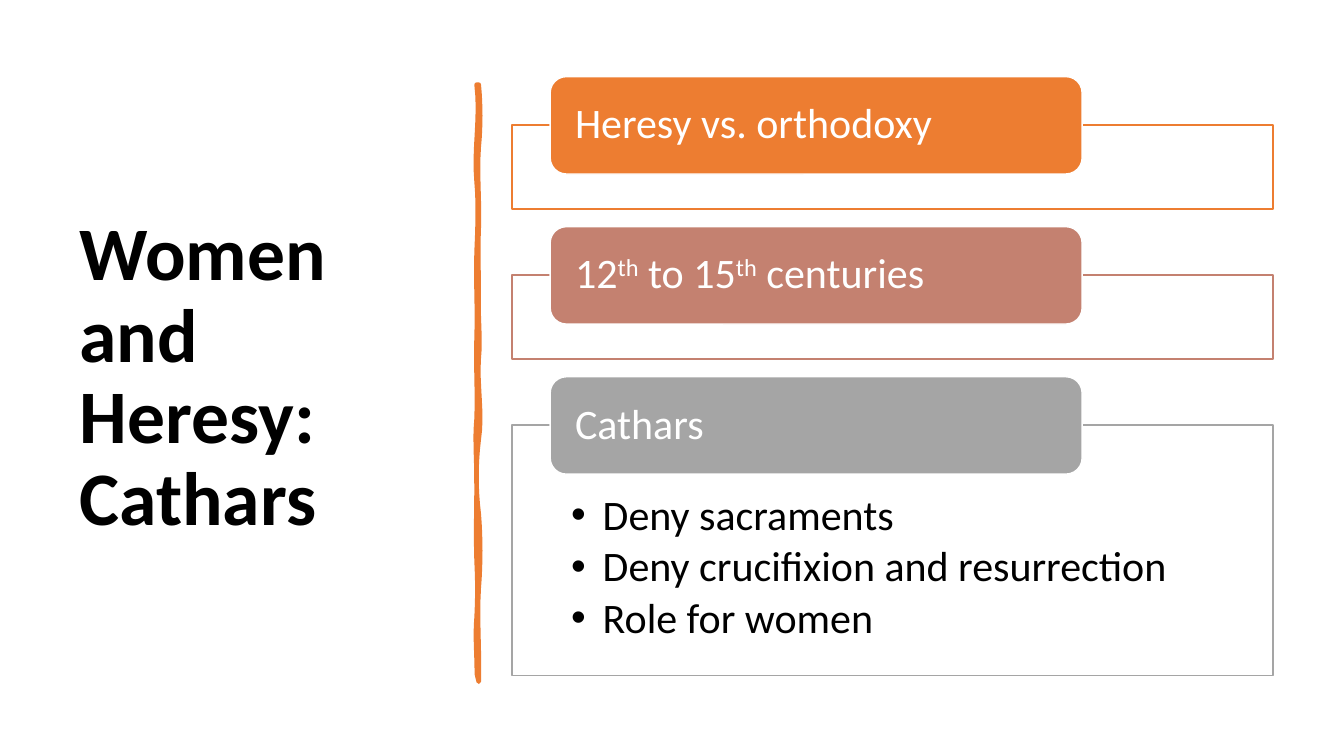
from lxml.etree import SubElement
from pptx import Presentation
from pptx.dml.color import RGBColor
from pptx.enum.shapes import MSO_SHAPE
from pptx.enum.text import MSO_ANCHOR, MSO_AUTO_SIZE, PP_ALIGN
from pptx.oxml.ns import qn
from pptx.util import Pt

ORANGE = RGBColor(0xED, 0x7D, 0x31)
ROSE = RGBColor(0xC4, 0x81, 0x70)
GREY = RGBColor(0xA5, 0xA5, 0xA5)
WHITE = RGBColor(0xFF, 0xFF, 0xFF)
BLACK = RGBColor(0x00, 0x00, 0x00)

TITLE_FONT = {"name": "Calibri", "size": Pt(54), "bold": True}
TOPIC_FONT = {"name": "Calibri", "size": Pt(30)}

FRAME_LEFT, FRAME_WIDTH = 365.8, 543.6
FIRST_FRAME_TOP, TOPIC_PITCH = 89.3, 107.2
LABEL_LEFT, LABEL_WIDTH, LABEL_HEIGHT = 393, 380, 69.6
LABEL_RISE = 34.6

# Each topic: label as (text, superscript) runs, colour, frame height, details
TOPICS = [
    ([("Heresy vs. orthodoxy", False)], ORANGE, 60, []),
    ([("12", False), ("th", True), (" to 15", False), ("th", True),
      (" centuries", False)], ROSE, 60, []),
    ([("Cathars", False)], GREY, 178.6,
     ["Deny sacraments", "Deny crucifixion and resurrection",
      "Role for women"]),
]

# Brush edges: (segment end, first bend, second bend)
BRUSH_TOP, BRUSH_LEFT, BRUSH_RIGHT = 60.5, 340.5, 342
RIGHT_BENDS = [
    (105, 1.4, 1.4), (163, -1.4, 0.7), (212, -0.7, 0), (256, -0.7, 1.4),
    (314, -1.4, 2.9), (367, -2.2, -2.2), (420, 1.4, 1.4), (487, -1.4, 0.7),
]
LEFT_BENDS = [
    (441, 0.7, -1.4), (401, 0.7, 0.7), (343, -0.7, 0), (299, 0, -1.4),
    (241, 0.7, -0.7), (180, 0.7, -0.7), (130, 0.7, 1.4), (60.5, -2.2, 2.9),
]


def apply_format(target, values):
    for name, value in values.items():
        setattr(target, name, value)


def place(shape, left, top, width, height):
    apply_format(shape, {"left": Pt(left), "top": Pt(top),
                         "width": Pt(width), "height": Pt(height)})


def paint(shape, fill, line, line_width):
    shape.fill.solid()
    shape.fill.fore_color.rgb = fill
    shape.line.color.rgb = line
    shape.line.width = Pt(line_width)


def paint_frame(frame, color):
    """Outline a frame in its topic colour over a 90 % opaque white fill."""
    paint(frame, WHITE, color, 1)
    fill_color = frame._element.spPr.find(qn("a:solidFill"))[0]
    SubElement(fill_color, qn("a:alpha")).set("val", "90000")


def format_paragraph(paragraph, font, color, space_after):
    apply_format(paragraph, {"alignment": PP_ALIGN.LEFT, "line_spacing": 0.9,
                             "space_before": Pt(0),
                             "space_after": Pt(space_after)})
    for run in paragraph.runs:
        apply_format(run.font, font)
        run.font.color.rgb = color


def set_title(title):
    place(title, 49.7, 50.4, 269.3, 440)
    title.text_frame.text = "Women and Heresy: Cathars"
    apply_format(title.text_frame, {"word_wrap": True,
                                    "auto_size": MSO_AUTO_SIZE.NONE,
                                    "vertical_anchor": MSO_ANCHOR.MIDDLE})
    format_paragraph(title.text_frame.paragraphs[0], TITLE_FONT, BLACK, 6)


def edge_points(x, start, bends, steps=8):
    """Points along a vertical edge that bends around x."""
    points = []
    for end, first, second in bends:
        for step in range(1, steps + 1):
            t = step / steps
            offset = 3 * t * (1 - t) * ((1 - t) * first + t * second)
            points.append((Pt(x + offset), Pt(start + t * (end - start))))
        start = end
    return points


def add_brush_stroke(shapes):
    right_edge = edge_points(BRUSH_RIGHT, BRUSH_TOP, RIGHT_BENDS)
    left_edge = edge_points(BRUSH_LEFT, RIGHT_BENDS[-1][0], LEFT_BENDS)
    builder = shapes.build_freeform(Pt(BRUSH_RIGHT), Pt(BRUSH_TOP))
    builder.add_line_segments(right_edge + left_edge, close=True)
    stroke = builder.convert_to_shape()
    stroke.shadow.inherit = False
    paint(stroke, ORANGE, ORANGE, 3.25)


def fill_details(body, details):
    text = body.text_frame
    text.text = "\n".join(details)
    apply_format(text, {"word_wrap": True, "auto_size": MSO_AUTO_SIZE.NONE,
                        "vertical_anchor": MSO_ANCHOR.TOP,
                        "margin_left": Pt(42.2), "margin_right": Pt(42.2),
                        "margin_top": Pt(49), "margin_bottom": Pt(16.6)})
    for paragraph in text.paragraphs:
        properties = paragraph._p.get_or_add_pPr()
        properties.set("marL", str(Pt(22.5)))
        properties.set("indent", str(Pt(-22.5)))
        SubElement(properties, qn("a:buChar")).set("char", "•")
        format_paragraph(paragraph, TOPIC_FONT, BLACK, 4.5)


def add_label(shapes, top, runs, color):
    label = shapes.add_shape(MSO_SHAPE.ROUNDED_RECTANGLE, Pt(LABEL_LEFT),
                             Pt(top), Pt(LABEL_WIDTH), Pt(LABEL_HEIGHT))
    label.shadow.inherit = False
    paint(label, color, WHITE, 1)
    apply_format(label.text_frame, {
        "word_wrap": True, "vertical_anchor": MSO_ANCHOR.MIDDLE,
        "margin_left": Pt(14.4), "margin_right": Pt(14.4),
        "margin_top": Pt(0), "margin_bottom": Pt(0)})
    paragraph = label.text_frame.paragraphs[0]
    for words, superscript in runs:
        run = paragraph.add_run()
        run.text = words
        if superscript:
            run.font._element.set("baseline", "30000")
    format_paragraph(paragraph, TOPIC_FONT, WHITE, 0)


def add_topic(shapes, body, top, topic):
    """Draw a frame and its label; a topic with details uses the body."""
    runs, color, height, details = topic
    if details:
        frame = body
        fill_details(body, details)
    else:
        frame = shapes.add_shape(MSO_SHAPE.RECTANGLE, 0, 0, 0, 0)
        frame.shadow.inherit = False
    place(frame, FRAME_LEFT, top, FRAME_WIDTH, height)
    paint_frame(frame, color)
    add_label(shapes, top - LABEL_RISE, runs, color)


def main():
    presentation = Presentation()
    apply_format(presentation, {"slide_width": Pt(960),
                                "slide_height": Pt(540)})
    slide = presentation.slides.add_slide(presentation.slide_layouts[1])
    set_title(slide.shapes.title)
    add_brush_stroke(slide.shapes)
    for position, topic in enumerate(TOPICS):
        top = FIRST_FRAME_TOP + position * TOPIC_PITCH
        add_topic(slide.shapes, slide.placeholders[1], top, topic)
    presentation.save("out.pptx")


if __name__ == "__main__":
    main()
